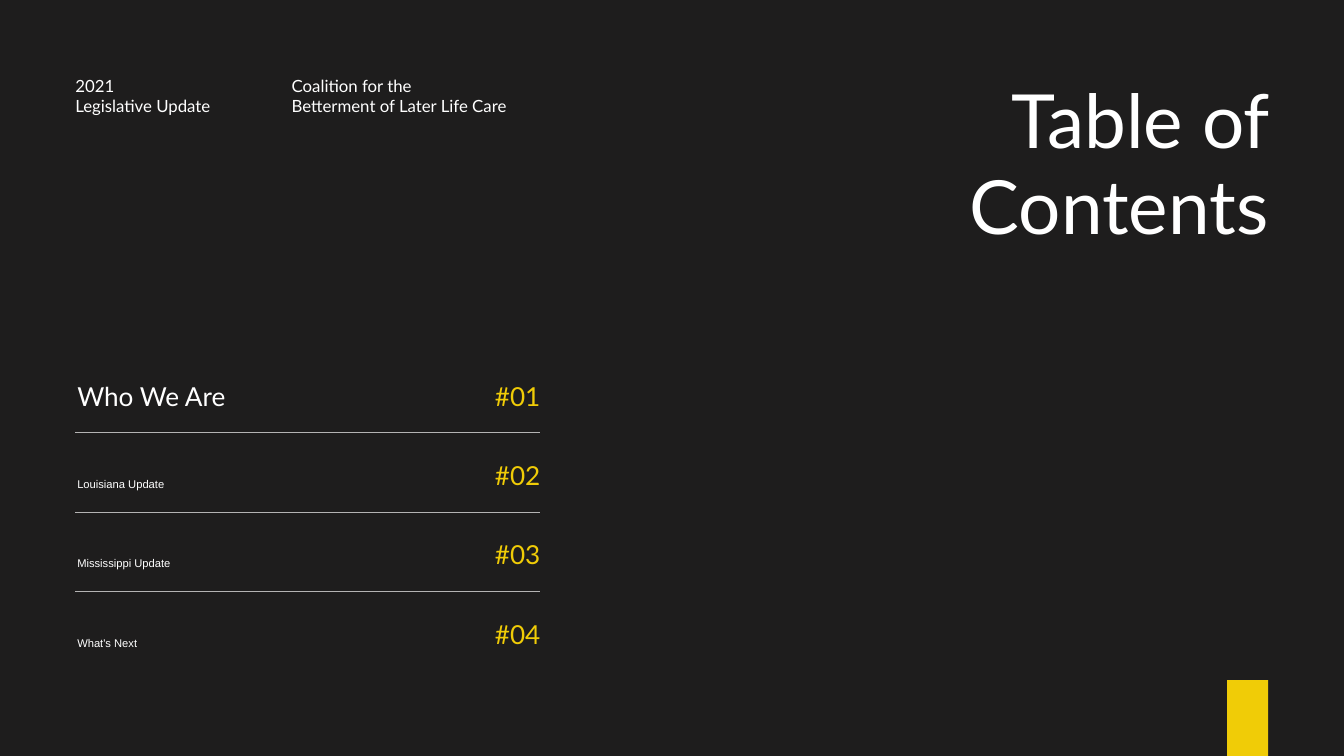
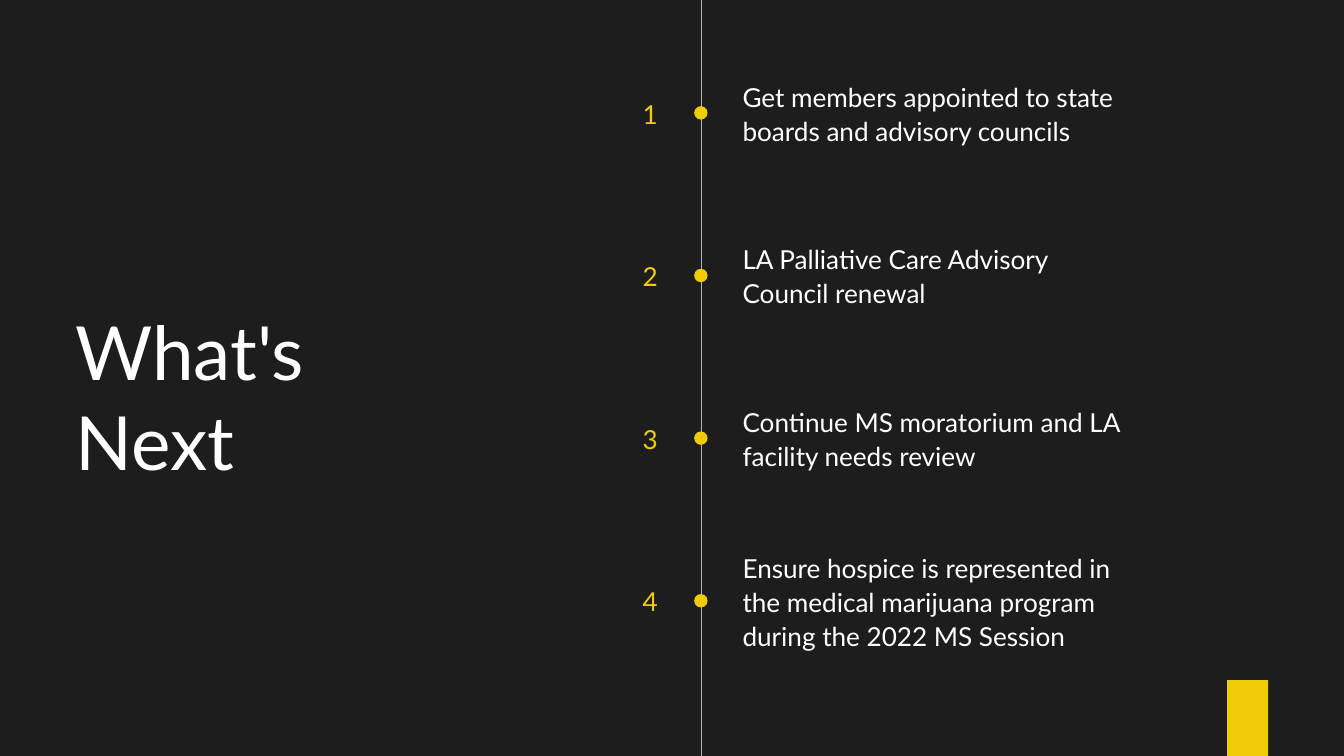
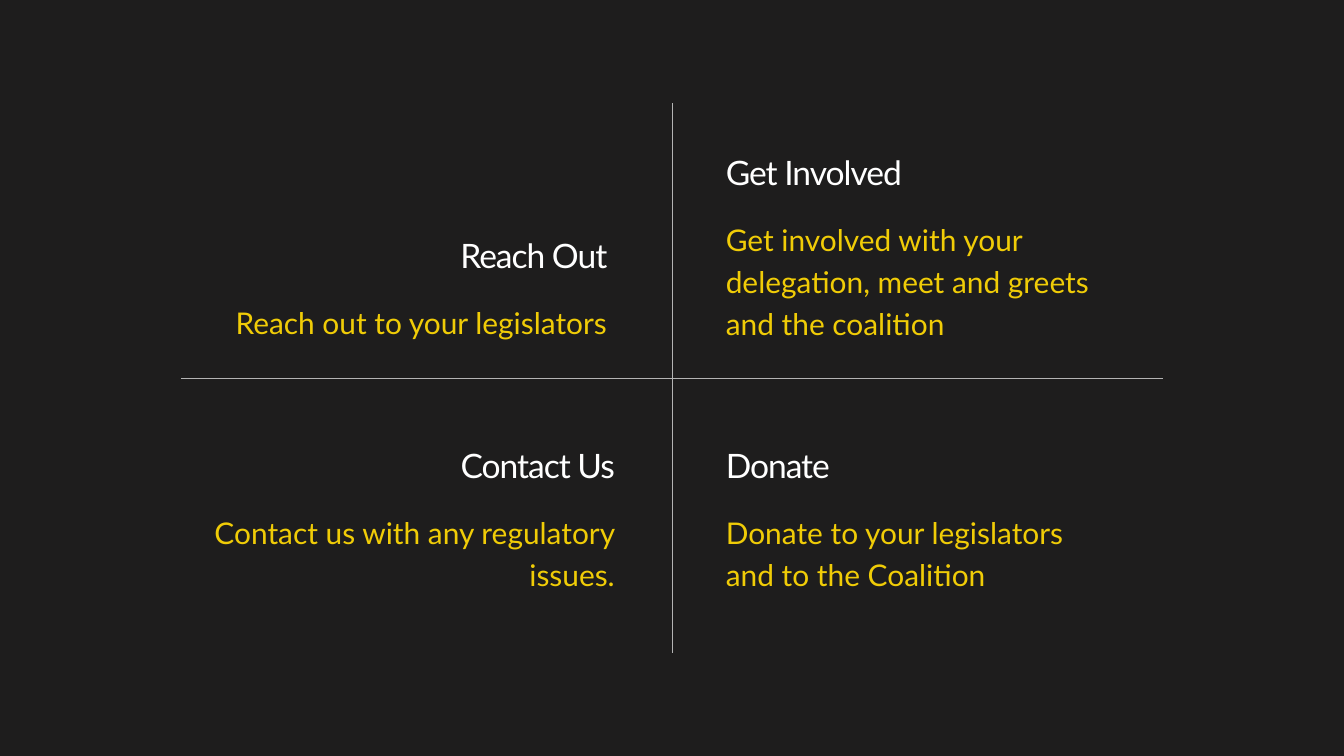
from lxml import etree
from pptx import Presentation
from pptx.dml.color import RGBColor
from pptx.enum import shapes, text
from pptx.oxml.ns import qn
from pptx.util import Inches, Pt

DARK = RGBColor(0x1E, 0x1D, 0x1D)
WHITE = RGBColor(0xFF, 0xFF, 0xFF)
YELLOW = RGBColor(0xF0, 0xCC, 0x07)
GREY = RGBColor(0xB4, 0xB4, 0xB4)

WIDTH, HEIGHT = 20, 11.25
MARGIN = 1.12
LEFT, RIGHT, JUSTIFY = text.PP_ALIGN.LEFT, text.PP_ALIGN.RIGHT, text.PP_ALIGN.JUSTIFY


class Deck:
    """Holds the shared style and the slide being built."""

    def __init__(self):
        self.prs = Presentation()
        self.prs.slide_width = Inches(WIDTH)
        self.prs.slide_height = Inches(HEIGHT)
        self.s = None

    def new_slide(self):
        self.s = self.prs.slides.add_slide(self.prs.slide_layouts[6])
        fill = self.s.background.fill
        fill.solid()
        fill.fore_color.rgb = DARK

    def text(self, words, x, y, w, h, size, leading, color=WHITE,
             align=LEFT, font="Lato", tracking=None):
        """Each line of words is a paragraph; leading and tracking are in points."""
        tf = self.s.shapes.add_textbox(Inches(x), Inches(y), Inches(w), Inches(h)).text_frame
        tf.margin_left = tf.margin_top = tf.margin_right = tf.margin_bottom = 0
        tf.word_wrap = True
        tf.auto_size = text.MSO_AUTO_SIZE.SHAPE_TO_FIT_TEXT
        tf.text = words
        for p in tf.paragraphs:
            p.alignment = align
            p.line_spacing = Pt(leading)
            p.font.name = font
            p.font.size = Pt(size)
            p.font.color.rgb = color
            if tracking is not None:
                for r in p.runs:
                    r._r.get_or_add_rPr().set("spc", str(round(tracking * 100)))

    def title(self, words, x, y, w, h, leading, align=LEFT):
        self.text(words, x, y, w, h, 80, leading, align=align)

    def line(self, x1, y1, x2, y2):
        c = self.s.shapes.add_connector(shapes.MSO_CONNECTOR.STRAIGHT, Inches(x1),
                                        Inches(y1), Inches(x2), Inches(y2))
        c.line.color.rgb = GREY
        c.line.width = Pt(0.75)
        etree.SubElement(c._element.spPr, qn("a:effectLst"))

    def shape(self, kind, x, y, w, h):
        sp = self.s.shapes.add_shape(kind, Inches(x), Inches(y), Inches(w), Inches(h))
        sp.shadow.inherit = False
        sp.fill.solid()
        sp.fill.fore_color.rgb = YELLOW
        sp.line.fill.background()

    def dot(self, cx, cy, size=0.2):
        self.shape(shapes.MSO_SHAPE.OVAL, cx - size / 2, cy - size / 2, size, size)

    def corner_tab(self):
        self.shape(shapes.MSO_SHAPE.RECTANGLE, 18.26, HEIGHT - 1.13, 0.61, 1.13)


def contents_slide(deck):
    deck.new_slide()
    deck.title("Table of Contents", 11.64, 1.16, 7.24, 2.57, 92, RIGHT)
    deck.text("2021\nLegislative Update", MARGIN, 1.12, 2.62, 0.58, 18, 21.6)
    deck.text("Coalition for the\nBetterment of Later Life Care",
              4.34, 1.12, 3.7, 0.58, 18, 21.6)

    top, pitch, right = 5.58, 1.18, 8.04
    entries = [("Who We Are", 28, "Lato"), ("Louisiana Update", 12, "Arial"),
               ("Mississippi Update", 12, "Arial"), ("What's Next", 12, "Arial")]
    for i, (entry, size, font) in enumerate(entries):
        y = top + i * pitch
        deck.text(entry, 1.15, y, 5.17, 0.51, size, 39.2, align=JUSTIFY, font=font)
        deck.text(f"#{i + 1:02}", right - 1.35, y, 1.35, 0.51, 28, 39.2, YELLOW, RIGHT)
        if i < len(entries) - 1:
            deck.line(MARGIN, y + 0.86, right, y + 0.86)
    deck.corner_tab()


def next_steps_slide(deck):
    deck.new_slide()
    deck.line(10.44, 0, 10.44, HEIGHT)
    deck.title("What's\nNext", MARGIN, 4.55, 5.9, 2.68, 96)

    first, pitch, line_height = 1.67, 2.42, 0.5
    steps = [("Get members appointed to state boards and advisory councils", 2),
             ("LA Palliative Care Advisory Council renewal", 2),
             ("Continue MS moratorium and LA facility needs review", 2),
             ("Ensure hospice is represented in the medical marijuana program "
              "during the 2022 MS Session", 3)]
    for i, (step, lines) in enumerate(steps):
        middle = first + i * pitch
        h = lines * line_height
        deck.dot(10.43, middle + 0.01)
        deck.text(step, 11.05, middle - h / 2, 5.85, h, 28, 36.4)
        deck.text(str(i + 1), 7.93, middle - line_height / 2, 1.86, line_height,
                  28, 36.4, YELLOW, RIGHT)
    deck.corner_tab()


def actions_slide(deck):
    deck.new_slide()
    actions = [
        ("Reach Out ", "Reach out to your legislators ", 3.08, 3.44, 6.07, 0.58, RIGHT),
        ("Contact Us", "Contact us with any regulatory issues.", 3.08, 6.57, 6.07, 1.19, RIGHT),
        ("Get Involved", "Get involved with your delegation, meet and greets and the coalition",
         10.8, 2.21, 5.98, 1.81, LEFT),
        ("Donate", "Donate to your legislators and to the Coalition",
         10.8, 6.57, 5.28, 1.19, LEFT),
    ]
    for heading, body, x, y, w, body_h, align in actions:
        deck.text(heading, x, y, w, 0.63, 36, 46.8, align=align, tracking=-1.1)
        deck.text(body, x, y + 1, w, body_h, 32, 44.8, YELLOW, align)

    mid_x, mid_y = WIDTH / 2, HEIGHT / 2
    deck.line(mid_x, mid_y - 4.09, mid_x, mid_y + 4.09)
    deck.line(mid_x - 7.31, mid_y, mid_x + 7.31, mid_y)


def main():
    deck = Deck()
    contents_slide(deck)
    next_steps_slide(deck)
    actions_slide(deck)
    deck.prs.save("out.pptx")


if __name__ == "__main__":
    main()
